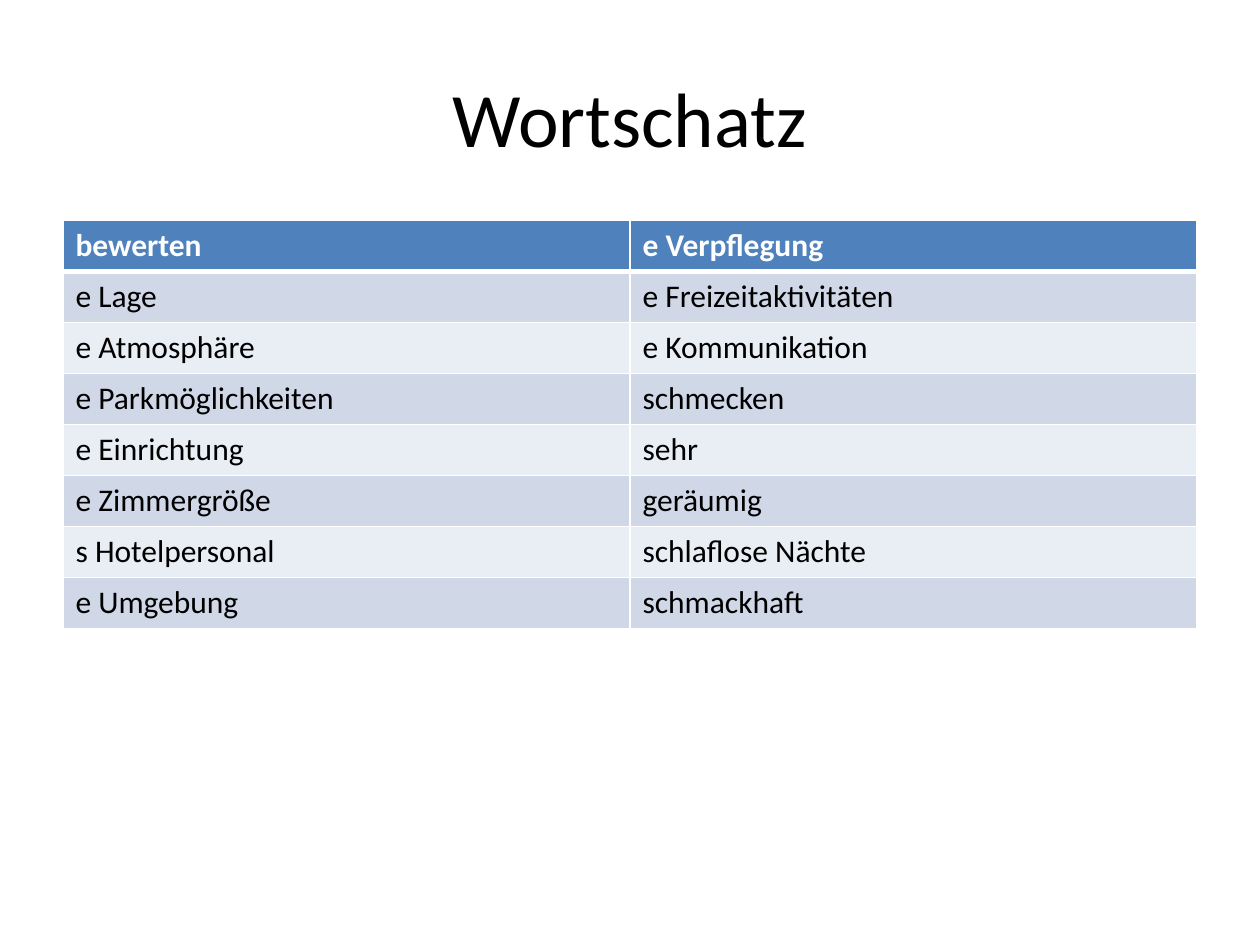
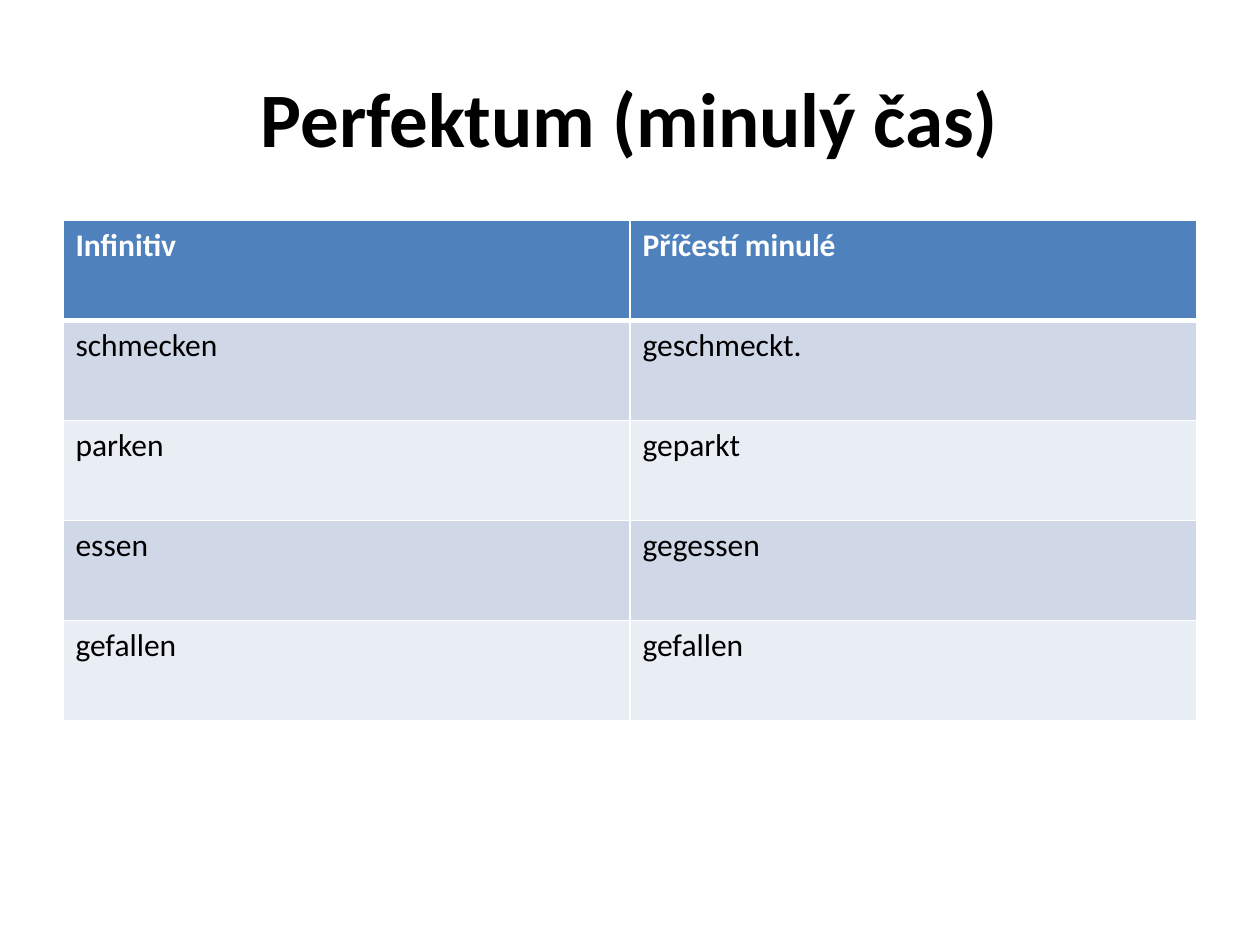
import pptx
import pptx.util
import pptx.dml.color
import pptx.enum.text
import pptx.oxml
import pptx.oxml.ns

RGBColor = pptx.dml.color.RGBColor
BLACK = RGBColor(0x00, 0x00, 0x00)
WHITE = RGBColor(0xFF, 0xFF, 0xFF)
HEADER_BLUE = RGBColor(0x4F, 0x81, 0xBD)
BAND_DARK = RGBColor(0xD0, 0xD8, 0xE8)
BAND_LIGHT = RGBColor(0xE9, 0xED, 0xF4)

VOCABULARY = [
    ("bewerten", "e Verpflegung"),
    ("e Lage", "e Freizeitaktivitäten"),
    ("e Atmosphäre", "e Kommunikation"),
    ("e Parkmöglichkeiten", "schmecken"),
    ("e Einrichtung", "sehr"),
    ("e Zimmergröße", "geräumig"),
    ("s Hotelpersonal", "schlaflose Nächte"),
    ("e Umgebung", "schmackhaft"),
]
PARTICIPLES = [
    ("Infinitiv", "Příčestí minulé"),
    ("schmecken", "geschmeckt."),
    ("parken", "geparkt"),
    ("essen", "gegessen"),
    ("gefallen", "gefallen"),
]


class Deck:
    """Shared style and the current slide, on a grid of 20 columns by 30 rows."""

    COLUMNS, ROWS = 20, 30
    LEFT, WIDTH = 1, 18
    FONT = "Calibri"
    TITLE_SIZE, CELL_SIZE = 44, 18
    THIN, THICK = 1, 3

    def __init__(self):
        self.prs = pptx.Presentation()
        self.prs.slide_width = pptx.util.Inches(10)
        self.prs.slide_height = pptx.util.Inches(7.5)
        self.s = None

    def box(self, top, height):
        """Full content width, between two grid rows."""
        col = self.prs.slide_width / self.COLUMNS
        row = self.prs.slide_height / self.ROWS
        return [round(v) for v in
                (self.LEFT * col, top * row, self.WIDTH * col, height * row)]

    def slide(self):
        self.s = self.prs.slides.add_slide(self.prs.slide_layouts[6])

    def run(self, p, text, size, color, bold):
        r = p.add_run()
        r.text = text
        r.font.name = self.FONT
        r.font.size = pptx.util.Pt(size)
        r.font.bold = bold
        r.font.color.rgb = color

    def title(self, text, bold=False):
        tf = self.s.shapes.add_textbox(*self.box(1.2, 5)).text_frame
        tf.word_wrap = True
        tf.vertical_anchor = pptx.enum.text.MSO_ANCHOR.MIDDLE
        p = tf.paragraphs[0]
        p.alignment = pptx.enum.text.PP_ALIGN.CENTER
        self.run(p, text, self.TITLE_SIZE, BLACK, bold)

    def borders(self, cell, top, bottom):
        tcPr = cell._tc.get_or_add_tcPr()
        widths = {"lnL": self.THIN, "lnR": self.THIN, "lnT": top, "lnB": bottom}
        for tag, width in widths.items():
            tcPr.append(pptx.oxml.parse_xml(
                f'<a:{tag} {pptx.oxml.ns.nsdecls("a")} w="{pptx.util.Pt(width)}">'
                f'<a:solidFill><a:srgbClr val="{WHITE}"/></a:solidFill></a:{tag}>'))

    def table(self, entries, height):
        """The first entry is the header; the rest get alternating bands."""
        box = self.box(7, height)
        table = self.s.shapes.add_table(len(entries), len(entries[0]), *box).table
        for i, entry in enumerate(entries):
            header = i == 0
            band = BAND_DARK if i % 2 else BAND_LIGHT
            for j, text in enumerate(entry):
                cell = table.cell(i, j)
                self.borders(cell, self.THICK if i == 1 else self.THIN,
                             self.THICK if header else self.THIN)
                cell.fill.solid()
                cell.fill.fore_color.rgb = HEADER_BLUE if header else band
                self.run(cell.text_frame.paragraphs[0], text, self.CELL_SIZE,
                         WHITE if header else BLACK, header)


def main():
    deck = Deck()

    # Vocabulary
    deck.slide()
    deck.title("Wortschatz")
    deck.table(VOCABULARY, 12.96)

    # Past participles
    deck.slide()
    deck.title("Perfektum (minulý čas)", bold=True)
    deck.table(PARTICIPLES, 15.88)

    deck.prs.save("out.pptx")


if __name__ == "__main__":
    main()
